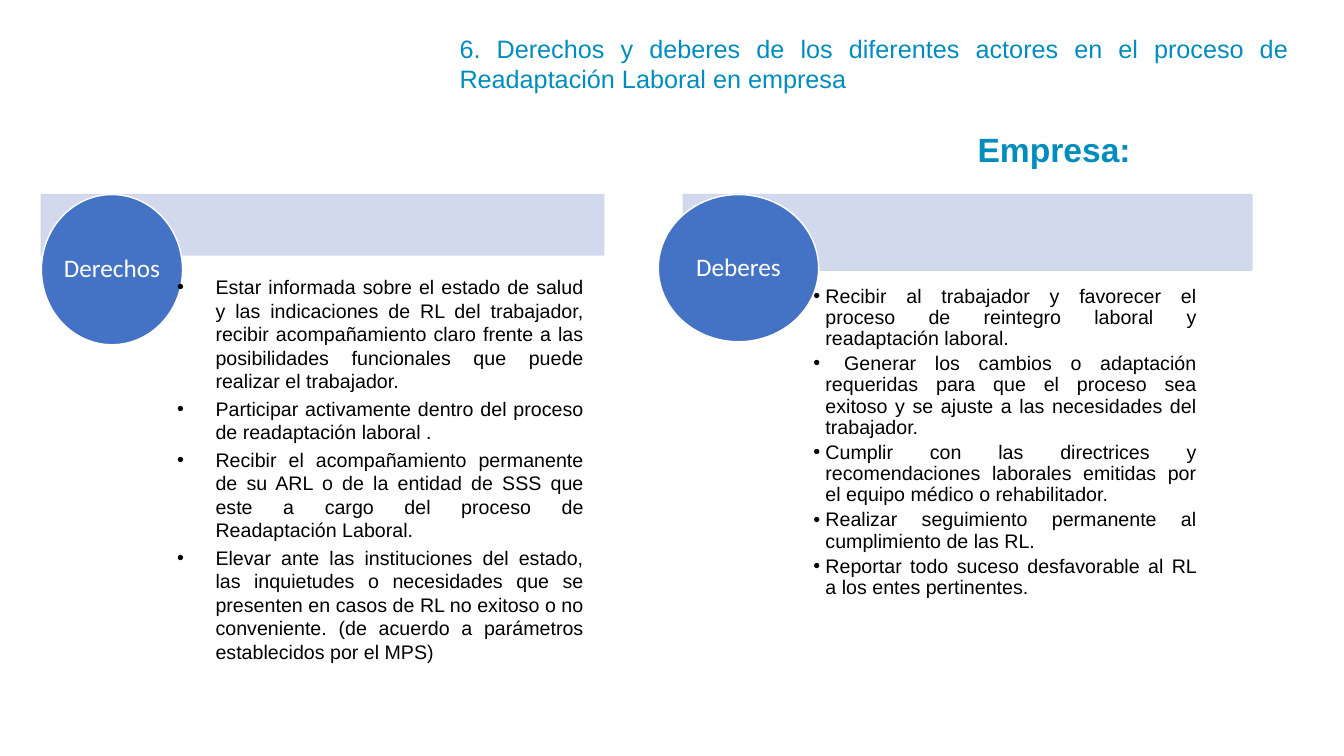
import pptx
import pptx.util
import pptx.dml.color
import pptx.enum.shapes
import pptx.enum.text
import lxml.etree

# Content: boxes are left, top, width, height in percent of the slide
TEAL, BLUE, PALE, WHITE, BLACK = "008DBD", "4472C4", "CFD5EA", "FFFFFF", "000000"
HEADS = [
    dict(text="6. Derechos y deberes de los diferentes actores en el proceso de "
              "Readaptación Laboral en empresa",
         box=(33.45, 3.73, 63.15, 9.47), size=18, bold=False, just=True),
    dict(text="Empresa:", box=(72, 16.4, 23.55, 6.67), size=24, bold=True, just=False),
]
TOP = 25.73
PANELS = [
    dict(name="Derechos", bar=(3.08, TOP, 41.85, 8), disc=(3.08, TOP, 10.5, 19.87),
         list=(12.45, 35.73, 31.73, 48.93), hang=0.38, lead=1.0,
         items=[
             "Estar informada sobre el estado de salud y las indicaciones de RL del "
             "trabajador, recibir acompañamiento claro frente a las posibilidades "
             "funcionales que puede realizar el trabajador.",
             "Participar activamente dentro del proceso de readaptación laboral .",
             "Recibir el acompañamiento permanente de su ARL o de la entidad de SSS "
             "que este a cargo del proceso de Readaptación Laboral.",
             "Elevar ante las instituciones del estado, las inquietudes o necesidades "
             "que se presenten en casos de RL no exitoso o no conveniente. (de acuerdo "
             "a parámetros establecidos por el MPS)",
         ]),
    dict(name="Deberes", bar=(50.85, TOP, 42.3, 10), disc=(48.98, TOP, 11.93, 19.47),
         list=(59.78, 37.2, 30, 57.6), hang=0.12, lead=0.9,
         items=[
             "Recibir al trabajador y favorecer el proceso de reintegro laboral y "
             "readaptación laboral.",
             " Generar los cambios o adaptación requeridas para que el proceso sea "
             "exitoso y se ajuste a las necesidades del trabajador.",
             "Cumplir con las directrices y recomendaciones laborales emitidas por el "
             "equipo médico o rehabilitador.",
             "Realizar seguimiento permanente al cumplimiento de las RL.",
             "Reportar todo suceso desfavorable al RL a los entes pertinentes.",
         ]),
]

deck = pptx.Presentation()
deck.slide_width = pptx.util.Inches(13.33)
deck.slide_height = pptx.util.Inches(7.5)
slide = deck.slides.add_slide(deck.slide_layouts[6])
ALIGN = pptx.enum.text.PP_ALIGN
KIND = pptx.enum.shapes.MSO_SHAPE


def color(code):
    return pptx.dml.color.RGBColor.from_string(code)


def place(box):
    sides = (deck.slide_width, deck.slide_height) * 2
    return [round(part * side / 100) for part, side in zip(box, sides)]


def write(par, text, size, code, font="Arial", bold=False):
    run = par.add_run()
    run.text = text
    run.font.size = pptx.util.Pt(size)
    run.font.name = font
    run.font.bold = bold
    run.font.color.rgb = color(code)


def frame(box):
    body = slide.shapes.add_textbox(*place(box)).text_frame
    body.word_wrap = True
    return body


def shape(kind, box, fill, line):
    item = slide.shapes.add_shape(kind, *place(box))
    item.shadow.inherit = False
    item.fill.solid()
    item.fill.fore_color.rgb = color(fill)
    item.line.color.rgb = color(line)
    item.line.width = pptx.util.Pt(1)
    return item


def fade(item, share):
    # Opacity of fill and line
    for tint in item.element.spPr.iter(pptx.oxml.ns.qn("a:srgbClr")):
        alpha = lxml.etree.SubElement(tint, pptx.oxml.ns.qn("a:alpha"))
        alpha.set("val", str(share * 1000))


def bullet(par, hang):
    props = par._p.get_or_add_pPr()
    props.set("marL", str(pptx.util.Inches(hang)))
    props.set("indent", str(-pptx.util.Inches(hang)))
    font = lxml.etree.SubElement(props, pptx.oxml.ns.qn("a:buFont"))
    font.set("typeface", "Arial")
    mark = lxml.etree.SubElement(props, pptx.oxml.ns.qn("a:buChar"))
    mark.set("char", "•")


# Headings
for head in HEADS:
    par = frame(head["box"]).paragraphs[0]
    par.alignment = ALIGN.JUSTIFY if head["just"] else ALIGN.LEFT
    write(par, head["text"], head["size"], TEAL, bold=head["bold"])

for panel in PANELS:
    # Bar and labelled disc
    fade(shape(KIND.RECTANGLE, panel["bar"], PALE, PALE), 90)
    label = shape(KIND.OVAL, panel["disc"], BLUE, WHITE).text_frame
    label.margin_left = label.margin_right = label.margin_top = label.margin_bottom = 0
    label.vertical_anchor = pptx.enum.text.MSO_ANCHOR.MIDDLE
    label.word_wrap = False
    par = label.paragraphs[0]
    par.alignment = ALIGN.CENTER
    par.line_spacing = 0.9
    write(par, panel["name"], 18, WHITE, font="Calibri")

    # Bulleted list
    body = frame(panel["list"])
    for rank, text in enumerate(panel["items"]):
        par = body.add_paragraph() if rank else body.paragraphs[0]
        par.alignment = ALIGN.JUSTIFY
        par.line_spacing = panel["lead"]
        par.space_before = pptx.util.Pt(2.8)
        bullet(par, panel["hang"])
        write(par, text, 14, BLACK)

deck.save("out.pptx")
